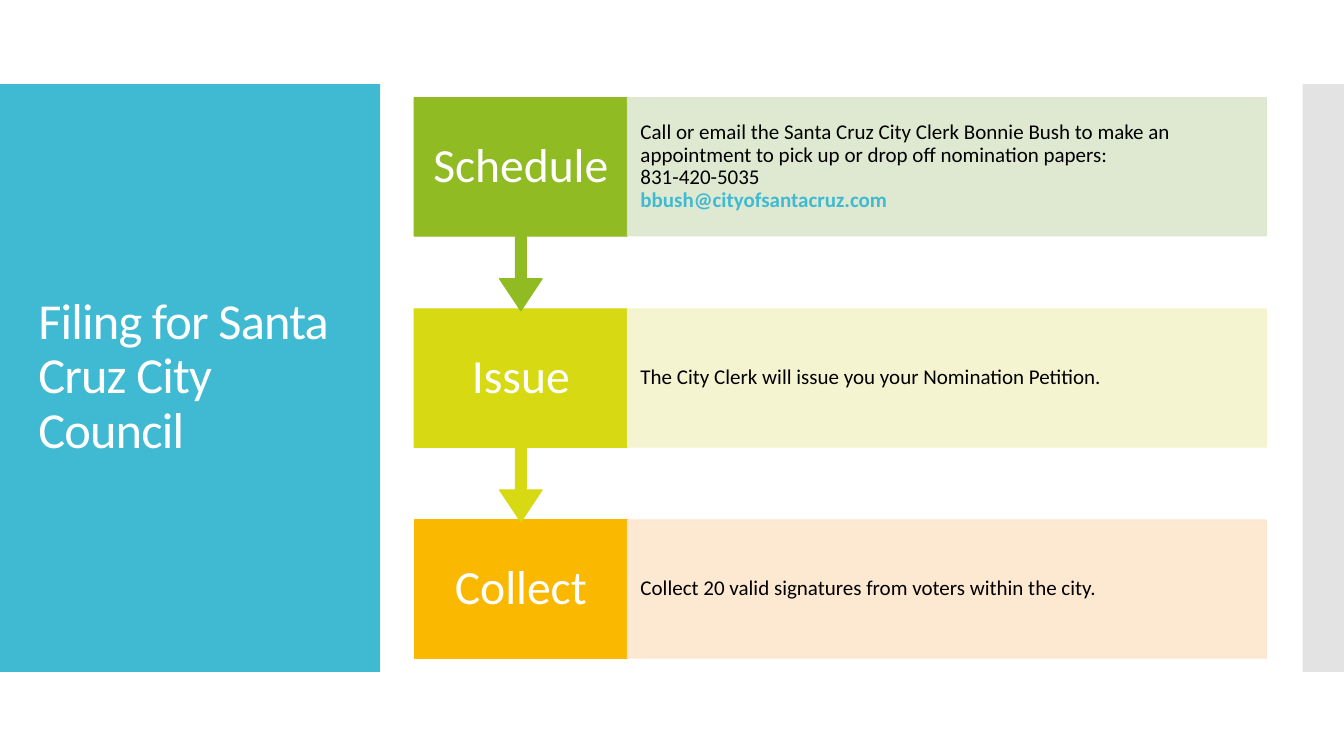
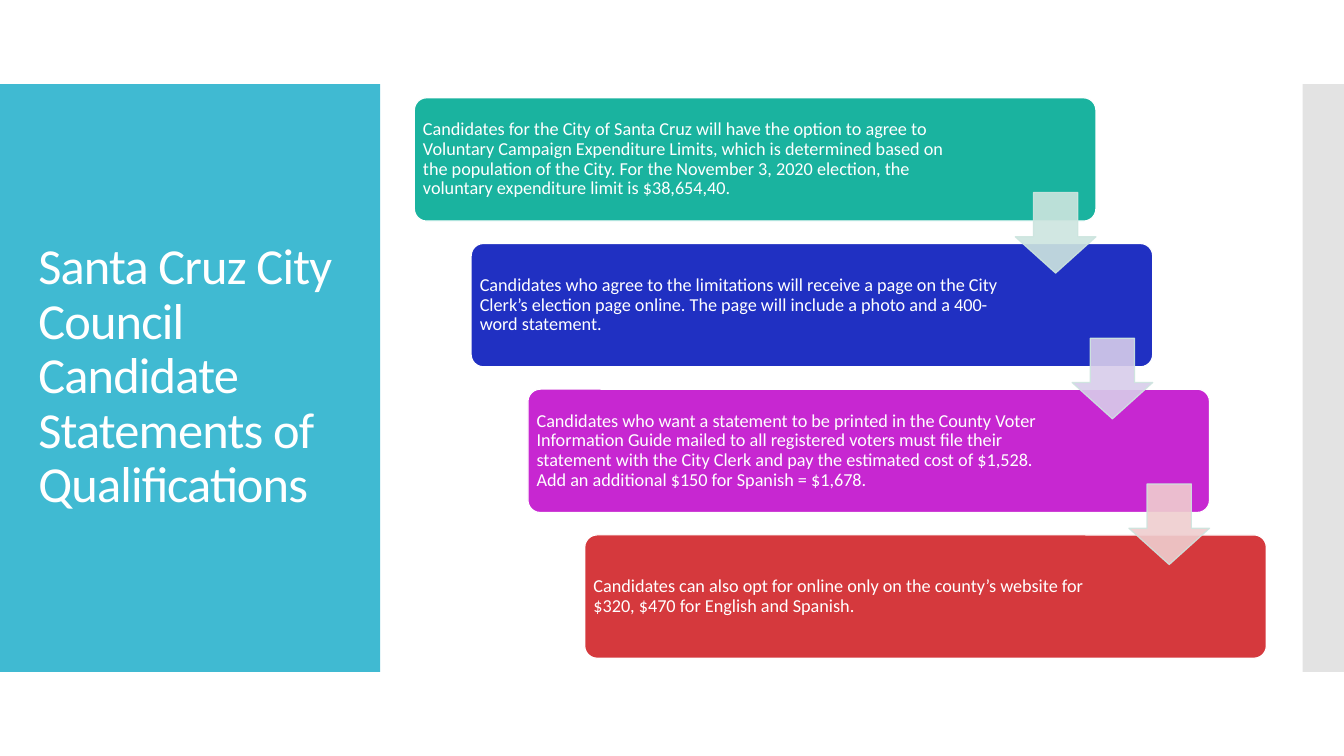
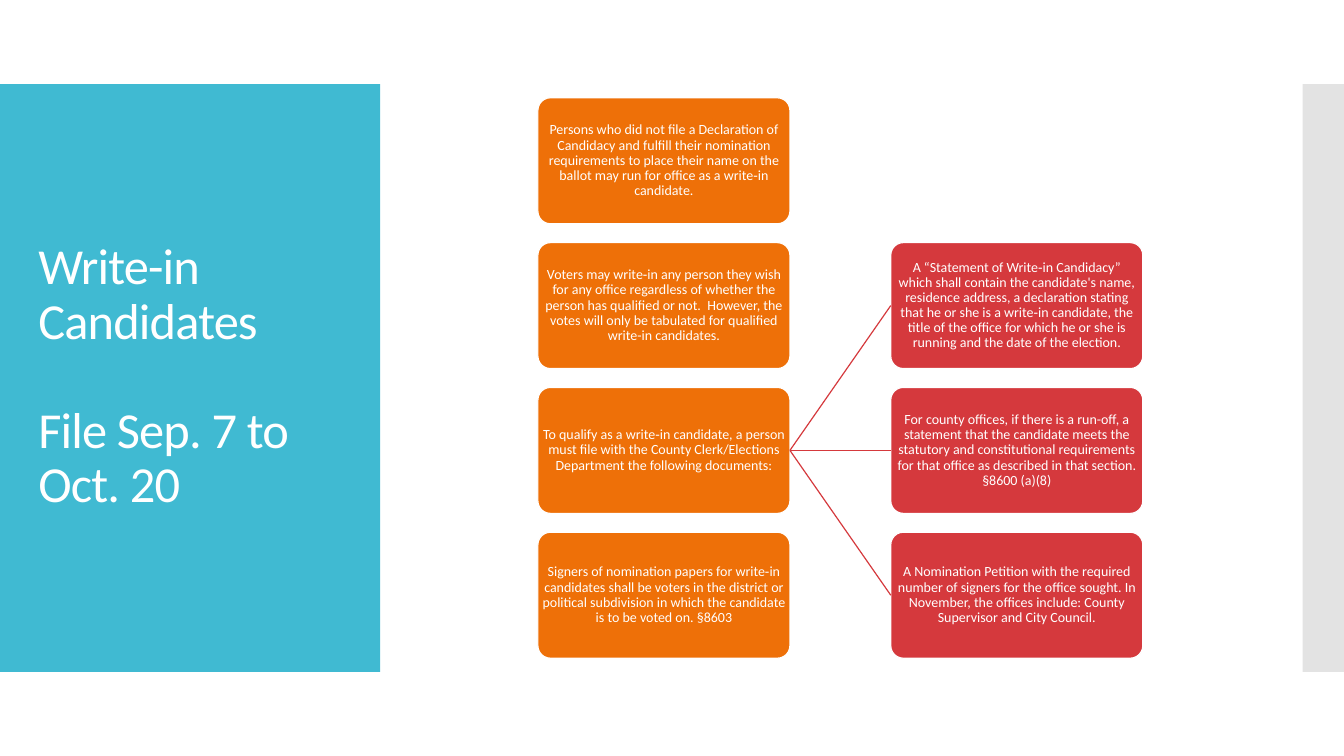
from lxml import etree
from pptx import Presentation
from pptx import util as u
from pptx.dml.color import RGBColor
from pptx.enum import shapes, text
from pptx.oxml import parse_xml
from pptx.oxml.ns import nsdecls, qn

FONT = "Calibri"
TEAL, RED, ORANGE, WHITE = "40BAD2", "D5393D", "EE7008", "FFFFFF"
SLIDE_W, SLIDE_H = 13.33, 7.5
BODY_X, BODY_Y, BODY_W, BODY_H = 4.11, 0.97, 8.45, 5.56
KIND = shapes.MSO_SHAPE


def add_block(slide, kind, x, y, w, h, fill, line=None, opacity=100, adjust=()):
    """Add a preset shape without shadow; lengths in inches, opacity in percent."""
    block = slide.shapes.add_shape(kind, *(u.Inches(v) for v in (x, y, w, h)))
    block.shadow.inherit = False
    for i, value in enumerate(adjust):
        block.adjustments[i] = value
    block.fill.solid()
    block.fill.fore_color.rgb = RGBColor.from_string(fill)
    if line:
        block.line.color.rgb = RGBColor.from_string(line)
        block.line.width = u.Pt(0.85)
    else:
        block.line.fill.background()
    if opacity < 100:
        for color in block.element.spPr.iter(qn("a:srgbClr")):
            etree.SubElement(color, qn("a:alpha")).set("val", str(opacity * 1000))
    return block


def write(block, content, size, color=WHITE, bold=False, align="LEFT", insets=(0.1, 0.05, 0.1, 0.05)):
    """Append one paragraph per line; insets are left, top, right, bottom in inches."""
    frame = block.text_frame
    frame.word_wrap = True
    frame.vertical_anchor = text.MSO_ANCHOR.MIDDLE
    frame.margin_left, frame.margin_top, frame.margin_right, frame.margin_bottom = (
        u.Inches(v) for v in insets)
    for line in content.split("\n"):
        paragraph = frame.paragraphs[0]
        if paragraph.runs:
            paragraph = frame.add_paragraph()
        paragraph.alignment = text.PP_ALIGN[align]
        paragraph.line_spacing = 0.9
        run = paragraph.add_run()
        run.text = line
        run.font.name, run.font.size, run.font.bold = FONT, u.Pt(size), bold
        run.font.color.rgb = RGBColor.from_string(color)


prs = Presentation()
prs.slide_width, prs.slide_height = u.Inches(SLIDE_W), u.Inches(SLIDE_H)
layout = prs.slide_layouts[5]

# Shared title style, set on the layout
layout_title = layout.placeholders[0]
layout_title.left, layout_title.top = u.Inches(0.28), u.Inches(1.23)
layout_title.width, layout_title.height = u.Inches(3.22), u.Inches(5.03)
layout_title.text_frame.vertical_anchor = text.MSO_ANCHOR.MIDDLE
layout_title.text_frame.auto_size = text.MSO_AUTO_SIZE.NONE
title_style = parse_xml(
    f'<a:lstStyle {nsdecls("a")}><a:lvl1pPr algn="l"><a:lnSpc><a:spcPct val="90000"/></a:lnSpc>'
    f'<a:defRPr sz="3600" spc="-60"><a:solidFill><a:srgbClr val="{WHITE}"/></a:solidFill>'
    f'<a:latin typeface="{FONT}"/></a:defRPr></a:lvl1pPr></a:lstStyle>')
title_body = layout_title.element.txBody
title_body.replace(title_body.find(qn("a:lstStyle")), title_style)

filing, statements, write_in = slides = [prs.slides.add_slide(layout) for _ in range(3)]
titles = ["Filing for Santa Cruz City Council",
          "Santa Cruz City Council Candidate Statements of Qualifications",
          "Write-in Candidates\v\vFile Sep. 7 to Oct. 20"]
for slide, title in zip(slides, titles):
    slide.shapes.title.text_frame.text = title

# Shared bands, moved to the back of the layout
for x, w, color, opacity in [(0, 3.77, TEAL, 100), (12.92, SLIDE_W - 12.92, "C8C8C8", 50)]:
    band = add_block(filing, KIND.RECTANGLE, x, SLIDE_H / 9, w, SLIDE_H * 7 / 9, color, opacity=opacity)
    layout.shapes.element.insert(2, band.element)

# Slide 1: three steps, drawn from the bottom so each arrow tip overlaps the next step
steps = [
    ("Schedule", "90BB23", "DCE7CD",
     "Call or email the Santa Cruz City Clerk Bonnie Bush to make an appointment to pick up or "
     "drop off nomination papers:\n831-420-5035", "bbush@cityofsantacruz.com"),
    ("Issue", "D7D913", "F4F3CB", "The City Clerk will issue you your Nomination Petition.", None),
    ("Collect", "FAB900", "FDE6CC", "Collect 20 valid signatures from voters within the city.", None),
]
step_h, step_w = 1.37, BODY_W / 4
step_pitch = (BODY_H - step_h) / 2
for row, (name, color, tint, details, email) in reversed(list(enumerate(steps))):
    y = BODY_Y + row * step_pitch
    if row < len(steps) - 1:
        step = add_block(filing, KIND.DOWN_ARROW_CALLOUT, BODY_X, y, step_w, step_w, color, color,
                         adjust=(0.05, 0.1, 0.15, 0.65))
    else:
        step = add_block(filing, KIND.RECTANGLE, BODY_X, y, step_w, step_h, color, color)
    write(step, name, 34, align="CENTER", insets=(0.15, 0.26, 0.15, 0.26))
    detail = add_block(filing, KIND.RECTANGLE, BODY_X + step_w, y, 3 * step_w, step_h, tint, tint, 90)
    detail_insets = (0.13, 0.21, 0.13, 0.21)
    write(detail, details, 15, "000000", insets=detail_insets)
    if email:
        write(detail, email, 15, TEAL, bold=True, insets=detail_insets)

# Slide 2: staircase of rules, with arrows on top
rules = [
    ("1AB39F", "CDE5DF",
     "Candidates for the City of Santa Cruz will have the option to agree to Voluntary Campaign "
     "Expenditure Limits, which is determined based on the population of the City. For the "
     "November 3, 2020 election, the voluntary expenditure limit is $38,654,40."),
    ("2030C2", "D8CDEA",
     "Candidates who agree to the limitations will receive a page on the City Clerk’s election page "
     "online. The page will include a photo and a 400-word statement."),
    ("C727D1", "EFCECF",
     "Candidates who want a statement to be printed in the County Voter Information Guide mailed to "
     "all registered voters must file their statement with the City Clerk and pay the estimated cost "
     "of $1,528. Add an additional $150 for Spanish = $1,678."),
    (RED, None,
     "Candidates can also opt for online only on the county’s website for $320, $470 for English "
     "and Spanish."),
]
rule_w, rule_h, arrow_size = BODY_W * 0.8, BODY_H * 0.22, 0.8
shift, rule_pitch = (BODY_W - rule_w) / 3, (BODY_H - rule_h) / 3
for row, (color, _, rule_text) in enumerate(rules):
    rule = add_block(statements, KIND.ROUNDED_RECTANGLE, BODY_X + row * shift, BODY_Y + row * rule_pitch,
                     rule_w, rule_h, color, WHITE, adjust=[0.1])
    write(rule, rule_text, 13, insets=(0.05, 0.05, 1.4, 0.05))
for row, (_, tint, _) in enumerate(rules[:-1]):
    add_block(statements, KIND.DOWN_ARROW, BODY_X + row * shift + rule_w - arrow_size,
              BODY_Y + row * rule_pitch + 0.94, arrow_size, arrow_size, tint, "CDE5DF", 90, (0.55, 0.45))

# Slide 3: facts on the left, required documents on the right
facts = [
    "Persons who did not file a Declaration of Candidacy and fulfill their nomination requirements to "
    "place their name on the ballot may run for office as a write‑in candidate.",
    "Voters may write‑in any person they wish for any office regardless of whether the person has "
    "qualified or not.  However, the votes will only be tabulated for qualified write-in candidates.",
    "To qualify as a write‑in candidate, a person must file with the County Clerk/Elections Department "
    "the following documents:",
    "Signers of nomination papers for write‑in candidates shall be voters in the district or political "
    "subdivision in which the candidate is to be voted on. §8603",
]
documents = [
    "A “Statement of Write‑in Candidacy” which shall contain the candidate's name, residence address, "
    "a declaration stating that he or she is a write‑in candidate, the title of the office for which he "
    "or she is running and the date of the election.",
    "For county offices, if there is a run-off, a statement that the candidate meets the statutory and "
    "constitutional requirements for that office as described in that section. §8600 (a)(8)",
    "A Nomination Petition with the required number of signers for the office sought. In November, the "
    "offices include: County Supervisor and City Council.",
]
card_w, card_h, card_gap = 2.5, 1.25, 1
card_pitch = (BODY_H - card_h) / 3
facts_x = BODY_X + (BODY_W - 2 * card_w - card_gap) / 2
columns = []
for x, first_row, color, contents in [(facts_x, 0, ORANGE, facts),
                                      (facts_x + card_w + card_gap, 1, RED, documents)]:
    cards = []
    for row, content in enumerate(contents, first_row):
        card = add_block(write_in, KIND.ROUNDED_RECTANGLE, x, BODY_Y + row * card_pitch, card_w, card_h,
                         color, WHITE, adjust=[0.1])
        write(card, content, 10, align="CENTER", insets=(0.01,) * 4)
        cards.append(card)
    columns.append(cards)

fact_cards, document_cards = columns
for document in document_cards:
    branch = write_in.shapes.add_connector(shapes.MSO_CONNECTOR.STRAIGHT, 0, 0, 0, 0)
    branch.begin_connect(fact_cards[2], 3)
    branch.end_connect(document, 1)
    branch.line.color.rgb = RGBColor.from_string(RED)
    branch.line.width = u.Pt(0.85)
    etree.SubElement(branch.element.spPr, qn("a:effectLst"))

prs.save("out.pptx")
